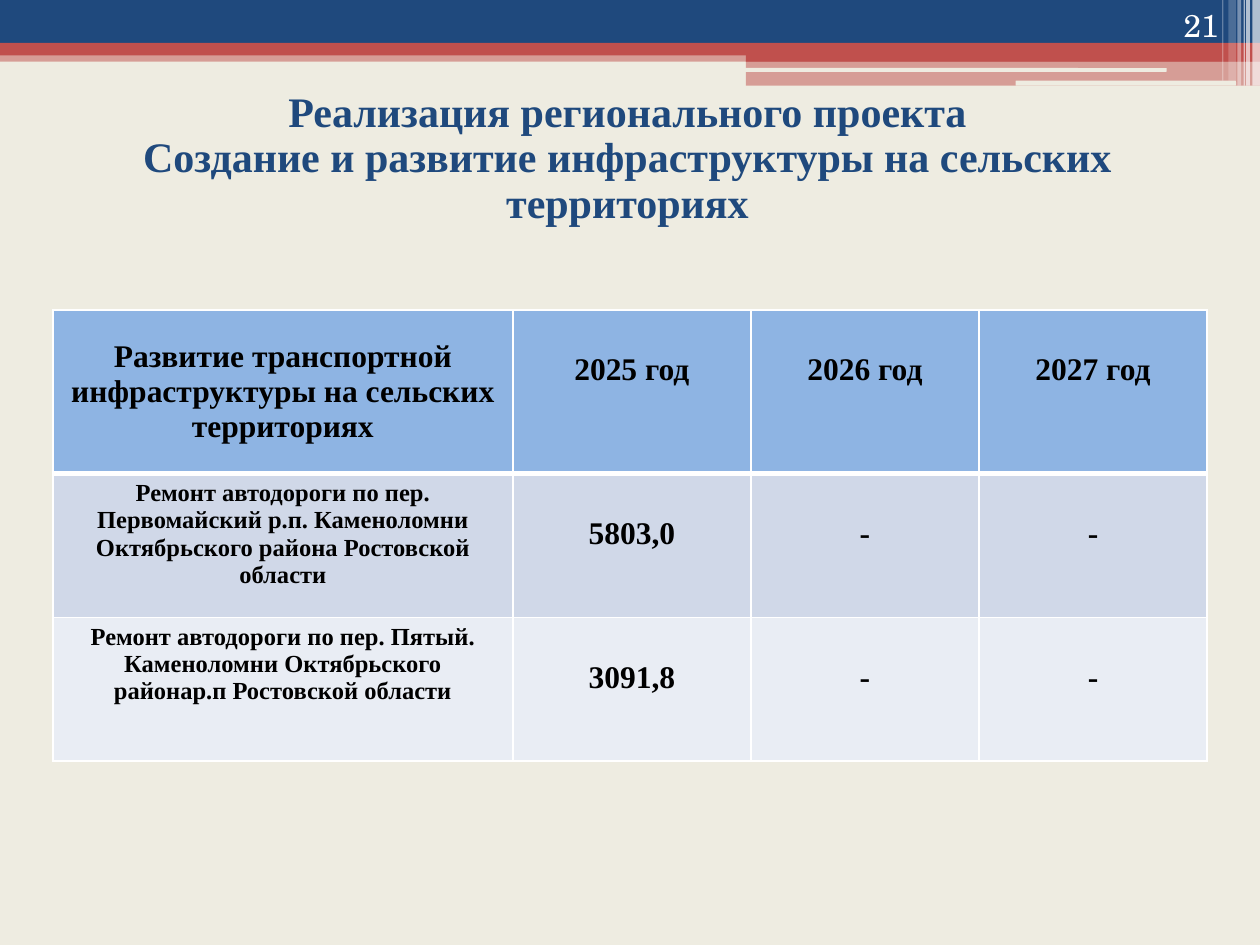
from lxml.etree import SubElement
from pptx import Presentation
from pptx.dml.color import RGBColor
from pptx.enum.shapes import MSO_SHAPE
from pptx.enum.text import MSO_ANCHOR, PP_ALIGN
from pptx.oxml.ns import qn
from pptx.util import Inches, Pt

WIDTH, HEIGHT = Inches(10), Inches(7.5)
COLORS = {
    "background": "EEECE1", "navy": "1F497D", "red": "C0504D",
    "white": "FFFFFF", "black": "000000", "header": "8EB4E3",
    "odd_row": "D0D8E8", "even_row": "E9EDF4",
}
SERIF = "Times New Roman"
TITLE = ("Реализация регионального проекта\v"
         "Создание и развитие инфраструктуры на сельских территориях")
ROADWORKS = [
    ["Развитие транспортной инфраструктуры на сельских территориях",
     "2025 год", "2026 год", "2027 год"],
    ["Ремонт автодороги по пер. Первомайский р.п. Каменоломни "
     "Октябрьского района Ростовской области", "5803,0", "-", "-"],
    ["Ремонт автодороги по пер. Пятый. Каменоломни Октябрьского "
     "районар.п Ростовской области", "3091,8", "-", "-"],
]
COLUMN_WIDTHS = [36.5, 18.9, 18.1, 18.1]
ROW_HEIGHTS = [13, 11.4, 11.4]
# Left, top, width, height, colour, opacity
BANDS = [
    (0, 4, 100, 0.9, "red", 50),
    (0, 0, 100, 3.4, "navy", 100),
    (0, 3.4, 100, 1, "red", 100),
    (59.2, 3.9, 40.8, 1, "red", 100),
    (59.2, 4.8, 40.8, 2, "red", 50),
]
SLITS = [(59.1, 5.4, 33.5, 0.3), (80.6, 6.4, 17.5, 0.4)]
# Left, width, height, opacity
STRIPES = [
    (99.4, 0.6, 6.8, 65), (98.9, 0.3, 6.8, 65), (98.7, 0.1, 6.8, 60),
    (98.2, 0.3, 6.8, 40), (97.5, 0.6, 6.4, 20), (97, 0.1, 6.4, 30),
]


def color(name):
    return RGBColor.from_string(COLORS[name])


def share(*percents):
    """Turn percents of the slide's width into lengths."""
    return [round(WIDTH * percent / 100) for percent in percents]


def paint(target, name):
    target.fill.solid()
    target.fill.fore_color.rgb = color(name)


def add_bar(slide, box, name, opacity=100, kind=MSO_SHAPE.RECTANGLE):
    bar = slide.shapes.add_shape(kind, *share(*box))
    bar.shadow.inherit = False
    bar.line.fill.background()
    paint(bar, name)
    if opacity < 100:
        tint = bar.fill._xPr.find(qn("a:solidFill"))[0]
        SubElement(tint, qn("a:alpha"), val=str(opacity * 1000))


def write(frame, text, ink, align, **font_format):
    frame.text = text
    frame.word_wrap = True
    paragraph = frame.paragraphs[0]
    paragraph.alignment = align
    for run in paragraph.runs:
        run.font.color.rgb = color(ink)
        for key, value in font_format.items():
            setattr(run.font, key, value)
    return paragraph


def add_label(slide, box, anchor, *text_format, **font_format):
    frame = slide.shapes.add_textbox(*share(*box)).text_frame
    frame.vertical_anchor = anchor
    return write(frame, *text_format, **font_format)


def set_borders(cell, **points):
    """Draw white borders; sides are L, R, T and B, in that order."""
    properties = cell._tc.get_or_add_tcPr()
    for position, (side, width) in enumerate(points.items()):
        line = SubElement(properties, qn(f"a:ln{side}"), w=str(Pt(width)))
        fill = SubElement(line, qn("a:solidFill"))
        SubElement(fill, qn("a:srgbClr"), val=COLORS["white"])
        properties.insert(position, line)


def add_roadworks_table(slide):
    box = share(4.2, 24.6, sum(COLUMN_WIDTHS), sum(ROW_HEIGHTS))
    table = slide.shapes.add_table(
        len(ROADWORKS), len(COLUMN_WIDTHS), *box).table
    for column, width in zip(table.columns, share(*COLUMN_WIDTHS)):
        column.width = width
    for row, height in zip(table.rows, share(*ROW_HEIGHTS)):
        row.height = height
    row_fills = ["header", "odd_row", "even_row"]
    for r, texts in enumerate(ROADWORKS):
        for c, text in enumerate(texts):
            cell = table.cell(r, c)
            is_work_name = r > 0 and c == 0
            write(cell.text_frame, text, "black", PP_ALIGN.CENTER,
                  name=SERIF, bold=True, size=Pt(14 if is_work_name else 18))
            if c > 0:
                cell.margin_top = Inches(0.34)
            elif r == 0:
                cell.vertical_anchor = MSO_ANCHOR.MIDDLE
            paint(cell, row_fills[r])
            set_borders(cell, L=1, R=1, T=3 if r == 1 else 1,
                        B=3 if r == 0 else 1)


def add_banner(slide):
    for *box, name, opacity in BANDS:
        add_bar(slide, box, name, opacity)
    for box in SLITS:
        add_bar(slide, box, "background", kind=MSO_SHAPE.ROUNDED_RECTANGLE)
    for left, width, height, opacity in STRIPES:
        add_bar(slide, (left, 0, width, height), "white", opacity)


def main():
    deck = Presentation()
    deck.slide_width, deck.slide_height = WIDTH, HEIGHT
    slide = deck.slides.add_slide(deck.slide_layouts[6])
    paint(slide.background, "background")
    add_banner(slide)
    title = add_label(slide, (4.8, 6.8, 90, 11.7), MSO_ANCHOR.MIDDLE,
                      TITLE, "navy", PP_ALIGN.CENTER,
                      name=SERIF, size=Pt(24), bold=True)
    title.line_spacing = 0.9
    add_label(slide, (89.4, 0, 8.3, 4), MSO_ANCHOR.BOTTOM,
              "21", "white", PP_ALIGN.RIGHT,
              name="TeX Gyre Schola", size=Pt(18))
    add_roadworks_table(slide)
    deck.save("out.pptx")


if __name__ == "__main__":
    main()
